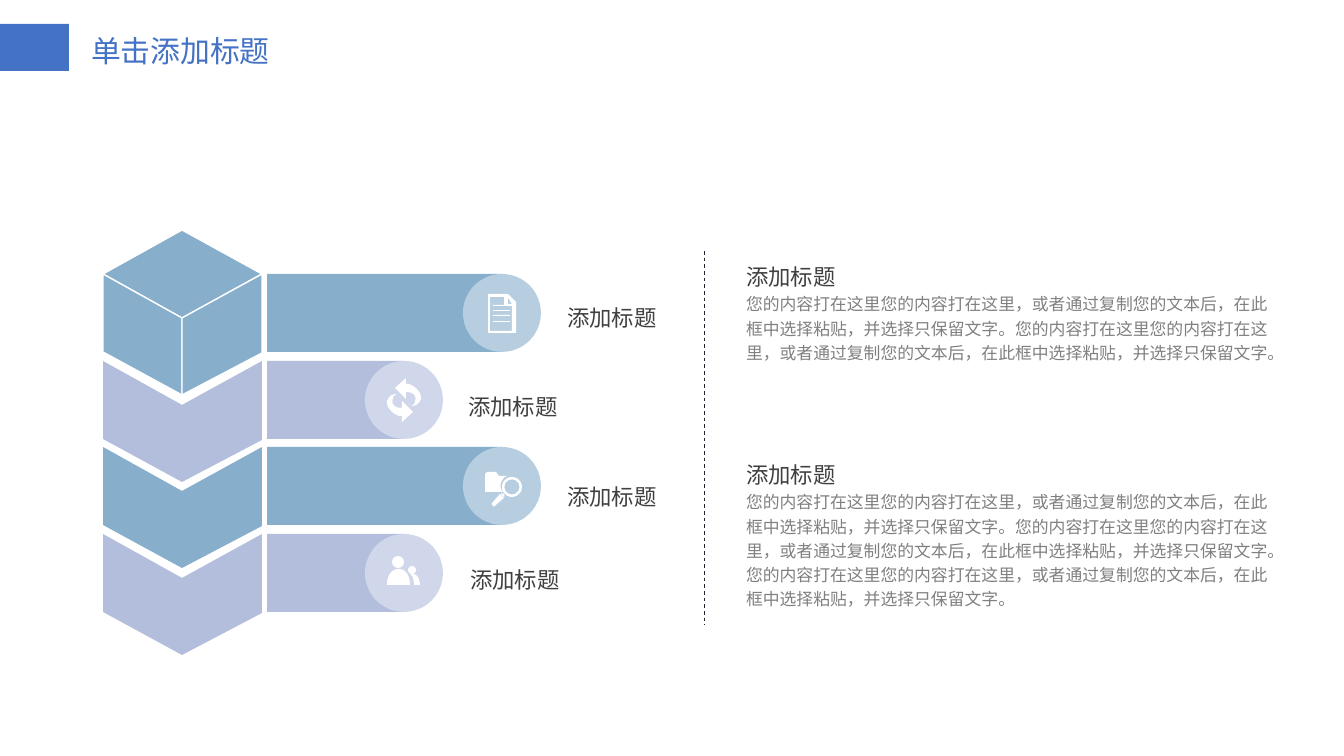
from typing import NamedTuple

from lxml.etree import SubElement
from pptx import Presentation
from pptx.dml.color import RGBColor
from pptx.enum.dml import MSO_LINE
from pptx.enum.shapes import MSO_CONNECTOR, MSO_SHAPE
from pptx.enum.text import MSO_ANCHOR, MSO_AUTO_SIZE, PP_ALIGN
from pptx.oxml.ns import qn
from pptx.util import Emu, Pt

SCALE = 914400 / 134.4
FONT = "Noto Sans CJK SC"
WHITE = RGBColor(0xFF, 0xFF, 0xFF)
ACCENT = RGBColor(0x44, 0x72, 0xC4)
BLUE = RGBColor(0x87, 0xAE, 0xCB)
PALE_BLUE = RGBColor(0xB7, 0xCE, 0xE0)
LILAC = RGBColor(0xB3, 0xBD, 0xDC)
PALE_LILAC = RGBColor(0xD1, 0xD7, 0xEA)
DARK = RGBColor(0x40, 0x40, 0x40)
GREY = RGBColor(0x80, 0x80, 0x80)
RULE = RGBColor(0x20, 0x20, 0x2E)

HEAD = "添加标题"
ASK = "您的内容打在这里您的内容打在这里，或者通过复制您的文本后，在此框中选择粘贴，并选择只保留文字。"

LEFT, MID, RIGHT = 103, 182, 262
BAR_X, SIDE = 267, 78


class Layer(NamedTuple):
    top: int
    width: int
    fill: RGBColor
    pale: RGBColor
    label_x: int
    label_y: int


class Note(NamedTuple):
    slot: int
    top: int
    height: int
    text: str


LAYERS = [
    Layer(274, 235, BLUE, PALE_BLUE, 554, 292),
    Layer(361, 137, LILAC, PALE_LILAC, 455, 381),
    Layer(447, 235, BLUE, PALE_BLUE, 554, 471),
    Layer(534, 137, LILAC, PALE_LILAC, 457, 554),
]
NOTES = [
    Note(1, 251, 144, ASK * 2),
    Note(2, 449, 218, ASK * 3),
]

# A step is a point (x, y), or a curve (x1, y1, x2, y2, x, y).
PAGE = [
    [(516, 302), (508, 294), (488, 294), (488, 333), (516, 333)],
    [(512, 304), (508, 304), (508, 298)],
    [(512, 331), (490, 331), (490, 297), (504, 297), (504, 306), (512, 306)],
]
ARROW = [
    (409, 384), (406, 384), (406, 378), (395, 388), (406, 399), (406, 392),
    (414, 392, 417, 396, 415, 402), (415, 403, 414, 405, 411, 406),
    (417, 406, 419, 403, 421, 399), (422, 394, 417, 387, 409, 384),
]
FOLDER = [
    (504, 478), (505, 477, 507, 476, 508, 476), (499, 476), (496, 472), (489, 472),
    (486, 472, 485, 473, 485, 477), (485, 492), (503, 492), (499, 488, 500, 482, 504, 478),
]
HANDLE = [
    (493, 502), (491, 504, 492, 505, 493, 506), (494, 507, 495, 506, 496, 505),
    (504, 498), (500, 494),
]
KNOB = [(501, 494), (502, 493, 504, 493, 504, 495), (505, 496, 505, 496, 504, 497)]
ADULT = [(399, 569), (392, 569, 387, 575, 387, 585), (410, 585), (410, 575, 405, 569, 399, 569)]
CHILD = [
    (413, 574), (411, 574, 411, 574, 411, 575), (413, 576, 414, 580, 414, 585),
    (420, 585), (420, 579, 417, 574, 413, 574),
]


def px(n: float) -> Emu:
    return Emu(round(n * SCALE))


def paint(shape, fill: RGBColor, line: RGBColor | None = None) -> None:
    shape.shadow.inherit = False
    shape.fill.solid()
    shape.fill.fore_color.rgb = fill
    if line is None:
        shape.line.fill.background()
    else:
        shape.line.color.rgb = line
        shape.line.width = Pt(0.75)


def block(slide, kind, x: int, y: int, w: int, h: int, fill: RGBColor):
    shape = slide.shapes.add_shape(kind, px(x), px(y), px(w), px(h))
    paint(shape, fill)
    return shape


def trace(steps: list) -> list:
    """Turn steps into points, with each curve split into eight lines."""
    points = []
    for step in steps:
        if len(step) == 2:
            points.append(step)
            continue
        ends = [points[-1], step[:2], step[2:4], step[4:]]
        for k in range(1, 9):
            t = k / 8
            parts = ((1 - t) ** 3, 3 * t * (1 - t) ** 2, 3 * t * t * (1 - t), t ** 3)
            points.append(tuple(sum(m * e[i] for m, e in zip(parts, ends)) for i in (0, 1)))
    return [(px(x), px(y)) for x, y in points]


def outline(slide, paths: list, fill: RGBColor, line: RGBColor | None = None) -> None:
    first, *rest = [trace(steps) for steps in paths]
    pen = slide.shapes.build_freeform(*first[0], scale=1.0)
    pen.add_line_segments(first[1:], close=True)
    for points in rest:
        pen.move_to(*points[0])
        pen.add_line_segments(points[1:], close=True)
    paint(pen.convert_to_shape(), fill, line)


def write(para, text: str, size: int, color: RGBColor, space: float = 1.2) -> None:
    para.alignment = PP_ALIGN.LEFT
    para.line_spacing = space
    para.space_before = para.space_after = Pt(0)
    run = para.add_run()
    run.text = text
    run.font.size = Pt(size)
    run.font.name = FONT
    run.font.color.rgb = color
    SubElement(run.font._element, qn("a:ea")).set("typeface", FONT)


def place(shape, x: int, y: int, w: int, h: int) -> None:
    shape.left, shape.top, shape.width, shape.height = map(px, (x, y, w, h))
    shape.text_frame.auto_size = MSO_AUTO_SIZE.NONE


def add_title(slide) -> None:
    block(slide, MSO_SHAPE.RECTANGLE, 0, 24, 69, 47, ACCENT)
    title = slide.shapes.title
    place(title, 81, 28, 202, 47)
    frame = title.text_frame
    frame.word_wrap = False
    frame.vertical_anchor = MSO_ANCHOR.TOP
    frame.margin_left = frame.margin_right = px(10)
    frame.margin_top = frame.margin_bottom = px(5)
    write(frame.paragraphs[0], "单击添加标题", 16, ACCENT, 1.0)


def add_layer(slide, layer: Layer, line: RGBColor | None) -> None:
    top = layer.top
    for x, low in ((LEFT, 78), (RIGHT, 79)):
        face = [(x, top), (x, top + low), (MID, top + 121), (MID, top + 44)]
        outline(slide, [face], layer.fill, line)
    block(slide, MSO_SHAPE.RECTANGLE, BAR_X, top, layer.width, SIDE, layer.fill)
    disc = BAR_X + layer.width - SIDE // 2
    block(slide, MSO_SHAPE.OVAL, disc, top, SIDE, SIDE, layer.pale)
    box = slide.shapes.add_textbox(px(layer.label_x), px(layer.label_y), px(118), px(43))
    box.text_frame.word_wrap = False
    write(box.text_frame.paragraphs[0], HEAD, 12, DARK)


def add_icons(slide) -> None:
    outline(slide, PAGE, WHITE)
    for k in range(4):
        block(slide, MSO_SHAPE.RECTANGLE, 493, 305 + 16 * k // 3, 17, 1, WHITE)
    turned = [tuple((808, 800)[i % 2] - n for i, n in enumerate(step)) for step in ARROW]
    for part in (ARROW, turned, FOLDER, HANDLE, KNOB, ADULT, CHILD):
        outline(slide, [part], WHITE)
    lens = block(slide, MSO_SHAPE.DONUT, 502, 477, 20, 20, WHITE)
    lens.adjustments[0] = 0.12
    block(slide, MSO_SHAPE.OVAL, 392, 556, 12, 12, WHITE)
    block(slide, MSO_SHAPE.OVAL, 408, 566, 8, 8, WHITE)


def add_note(slide, note: Note) -> None:
    body = slide.placeholders[note.slot]
    place(body, 746, note.top, 540, note.height)
    frame = body.text_frame
    frame.word_wrap = True
    frame.margin_left = 0
    write(frame.paragraphs[0], HEAD, 12, DARK)
    write(frame.add_paragraph(), note.text, 9, GREY)
    for para in frame.paragraphs:
        props = para._p.get_or_add_pPr()
        props.set("marL", "0")
        props.set("indent", "0")
        SubElement(props, qn("a:buNone"))


def add_rule(slide) -> None:
    rule = slide.shapes.add_connector(MSO_CONNECTOR.STRAIGHT, px(705), px(251), px(705), px(625))
    rule.line.color.rgb = RULE
    rule.line.width = Pt(0.5)
    rule.line.dash_style = MSO_LINE.DASH
    SubElement(rule._element.spPr, qn("a:effectLst"))


def main() -> None:
    deck = Presentation()
    deck.slide_width, deck.slide_height = px(1344), px(756)
    slide = deck.slides.add_slide(deck.slide_layouts[3])
    add_title(slide)
    lid = [(LEFT, 274), (MID, 318), (RIGHT, 274), (MID, 230)]
    outline(slide, [lid], BLUE, WHITE)
    for k, layer in enumerate(LAYERS):
        add_layer(slide, layer, WHITE if k == 0 else None)
    add_icons(slide)
    for note in NOTES:
        add_note(slide, note)
    add_rule(slide)
    deck.save("out.pptx")


if __name__ == "__main__":
    main()
